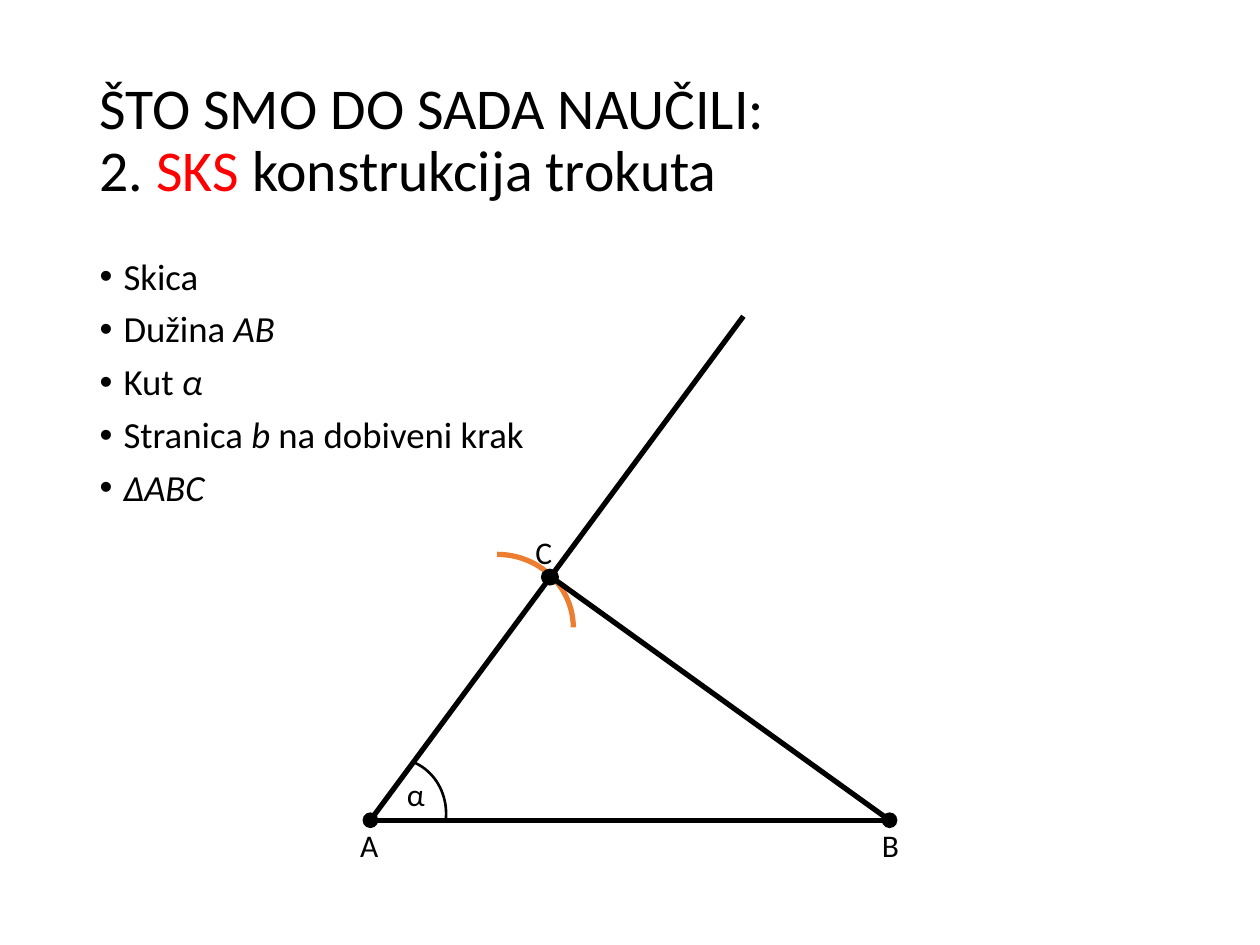
import pptx
import pptx.dml.color
import pptx.enum.shapes
import pptx.enum.text
import pptx.oxml
import pptx.oxml.ns
import pptx.util

Inches = pptx.util.Inches
Pt = pptx.util.Pt
MSO_SHAPE = pptx.enum.shapes.MSO_SHAPE

COLORS = {"ink": "000000", "accent": "FF0000", "compass": "ED7D31"}
FONT = "Calibri"

VERTEX_A = (2.94, 6.51)
VERTEX_B = (7.06, 6.51)
VERTEX_C = (4.32, 4.54)
RAY_END = (5.9, 2.51)

# Each step is a list of (text, italic) parts
STEPS = [
    [("Skica", False)],
    [("Dužina ", False), ("AB", True)],
    [("Kut ", False), ("α", True)],
    [("Stranica ", False), ("b ", True), ("na dobiveni krak", False)],
    [("ΔABC", True)],
]


def rgb(name):
    return pptx.dml.color.RGBColor.from_string(COLORS[name])


def place(shape, left, top, width, height):
    shape.left, shape.top = Inches(left), Inches(top)
    shape.width, shape.height = Inches(width), Inches(height)


def add_xml(parent, tag, **attributes):
    child = pptx.oxml.parse_xml(f"<a:{tag} {pptx.oxml.ns.nsdecls('a')}/>")
    for key, value in attributes.items():
        child.set(key, value)
    parent.append(child)


def add_run(paragraph, text, size, color="ink", italic=False):
    run = paragraph.add_run()
    run.text = text
    run.font.name = FONT
    run.font.size = Pt(size)
    run.font.italic = italic
    run.font.color.rgb = rgb(color)


def fill_title(title):
    place(title, 0.69, 0.4, 8.62, 1.45)
    frame = title.text_frame
    frame.auto_size = pptx.enum.text.MSO_AUTO_SIZE.NONE
    frame.vertical_anchor = pptx.enum.text.MSO_ANCHOR.MIDDLE
    heading = frame.paragraphs[0]
    heading.alignment = pptx.enum.text.PP_ALIGN.LEFT
    heading.line_spacing = 0.9
    add_run(heading, "ŠTO SMO DO SADA NAUČILI:", 33)
    heading.add_line_break()
    add_run(heading, "2. ", 33)
    add_run(heading, "SKS", 33, "accent")
    add_run(heading, " konstrukcija trokuta", 33)


def fill_steps(body):
    place(body, 0.69, 2, 8.62, 2.26)
    frame = body.text_frame
    frame.auto_size = pptx.enum.text.MSO_AUTO_SIZE.NONE
    for index, parts in enumerate(STEPS):
        step = frame.add_paragraph() if index else frame.paragraphs[0]
        step.line_spacing = 0.9
        step.space_before = Pt(7.5)
        properties = step._p.get_or_add_pPr()
        properties.set("marL", str(Inches(0.19)))
        properties.set("indent", str(-Inches(0.19)))
        add_xml(properties, "buFont", typeface="Arial")
        add_xml(properties, "buChar", char="•")
        for text, italic in parts:
            add_run(step, text, 21, italic=italic)


def add_segment(slide, start, end, dotted_ends=False):
    segment = slide.shapes.add_connector(
        pptx.enum.shapes.MSO_CONNECTOR.STRAIGHT, *map(Inches, start + end))
    segment.line.color.rgb = rgb("ink")
    segment.line.width = Pt(3)
    if dotted_ends:
        outline = segment.line._get_or_add_ln()
        add_xml(outline, "headEnd", type="oval")
        add_xml(outline, "tailEnd", type="oval")
    add_xml(segment._element.spPr, "effectLst")


def add_arc(slide, box, color, weight, angles=None, rotation=0):
    """Draw an arc; angles are its start and end in degrees."""
    arc = slide.shapes.add_shape(MSO_SHAPE.ARC, *map(Inches, box))
    arc.shadow.inherit = False
    arc.fill.background()
    arc.line.color.rgb = rgb(color)
    arc.line.width = Pt(weight)
    arc.rotation = rotation
    for index, angle in enumerate(angles or ()):
        arc.adjustments[index] = angle * 0.6


def add_point(slide, left, top):
    point = slide.shapes.add_shape(
        MSO_SHAPE.FLOWCHART_CONNECTOR, *map(Inches, (left, top, 0.13, 0.12)))
    point.shadow.inherit = False
    point.fill.solid()
    point.fill.fore_color.rgb = rgb("ink")
    point.line.color.rgb = rgb("ink")
    point.line.width = Pt(1)


def add_label(slide, text, left, top):
    label = slide.shapes.add_textbox(*map(Inches, (left, top, 0.35, 0.4)))
    label.text_frame.word_wrap = False
    add_run(label.text_frame.paragraphs[0], text, 18)


def main():
    deck = pptx.Presentation()
    deck.slide_width, deck.slide_height = Inches(10), Inches(7.5)
    slide = deck.slides.add_slide(deck.slide_layouts[1])
    fill_title(slide.shapes.title)
    fill_steps(slide.placeholders[1])

    add_segment(slide, VERTEX_B, VERTEX_A, dotted_ends=True)
    add_label(slide, "A", 2.76, 6.51)
    add_label(slide, "B", 6.9, 6.51)
    add_segment(slide, VERTEX_A, RAY_END)
    add_arc(slide, (3.34, 4.4, 1.21, 1.16), "compass", 3)
    add_point(slide, 4.3, 4.52)
    add_label(slide, "C", 4.15, 4.18)
    add_label(slide, "α", 3.13, 6.1)
    add_arc(slide, (2.71, 6.02, 0.83, 0.9), "ink", 1.5, (282.42, 356.37), 9.2)
    add_segment(slide, VERTEX_C, VERTEX_B)
    deck.save("out.pptx")


if __name__ == "__main__":
    main()
